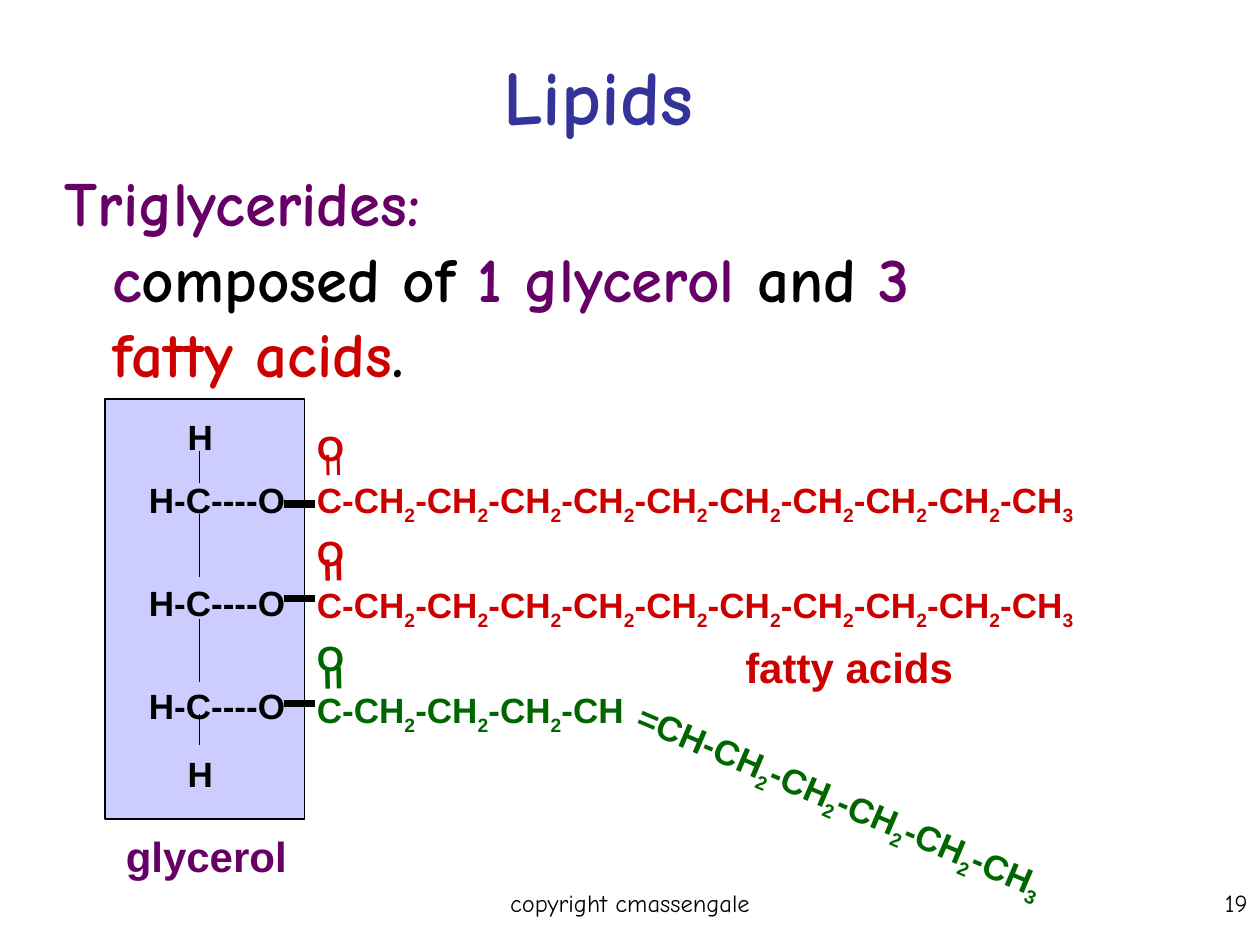
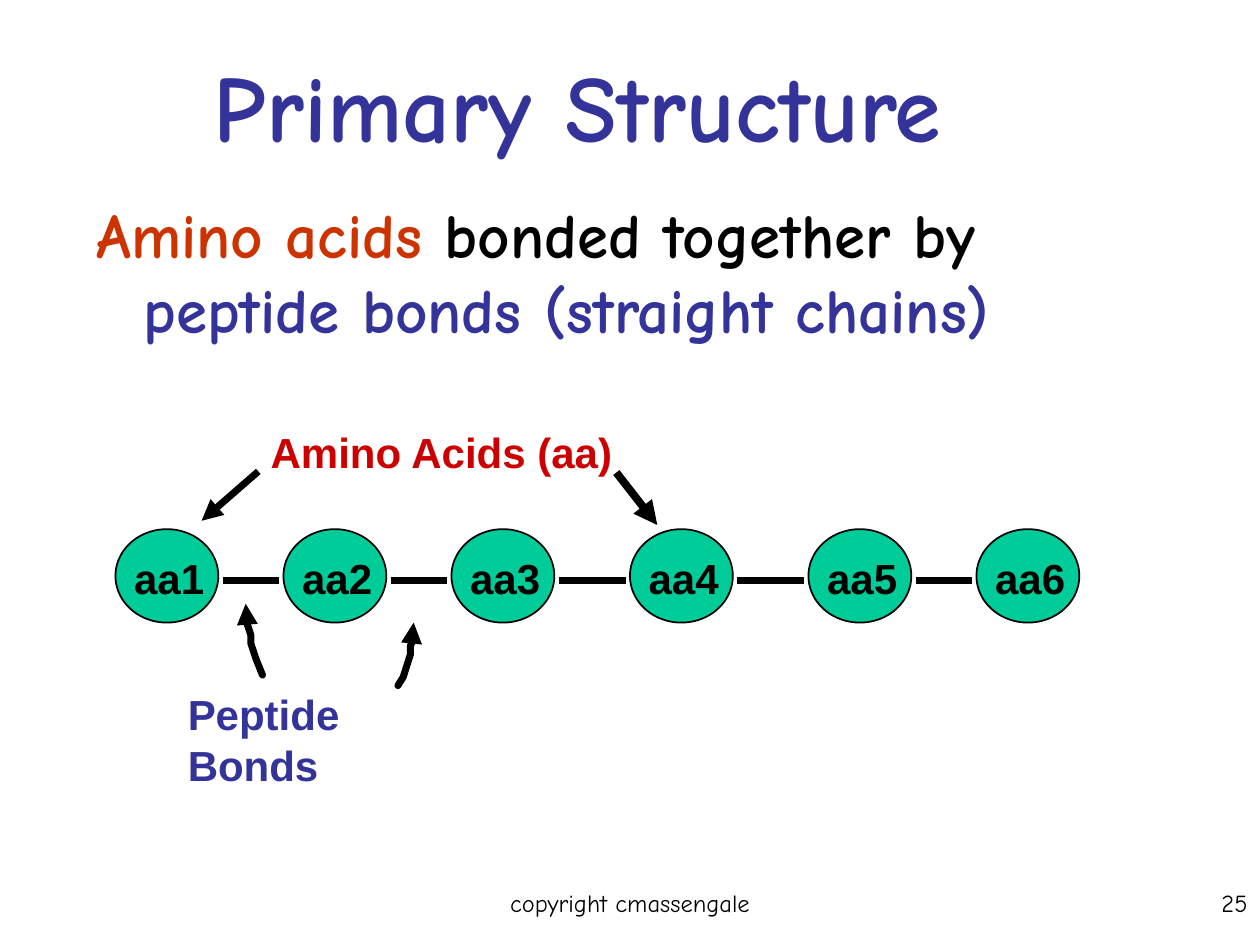
import itertools
from typing import NamedTuple

import pptx
import pptx.dml.color
import pptx.enum.shapes
import pptx.enum.text
import pptx.oxml
import pptx.oxml.ns
import pptx.util

# Page grid: 120 columns by 90 rows of square cells
COLUMNS, ROWS = 120, 90
CELL = pptx.util.Inches(10) // COLUMNS

# Shared style
HAND, SANS = "Comic Neue", "Arial"
BLACK, NAVY, PURPLE = "000000", "333399", "660066"
RED, RUST, GREEN = "CC0000", "CC3300", "006600"
LILAC, TEAL = "CCCCFF", "00CC99"
LEFT, CENTER, RIGHT = (
    pptx.enum.text.PP_ALIGN.LEFT,
    pptx.enum.text.PP_ALIGN.CENTER,
    pptx.enum.text.PP_ALIGN.RIGHT,
)
SHAPES = pptx.enum.shapes.MSO_SHAPE


class Box(NamedTuple):
    col: float
    row: float
    width: float
    height: float


class Style(NamedTuple):
    size: float
    color: str = BLACK
    font: str = SANS
    bold: bool = True


class Piece(NamedTuple):
    text: str
    color: str


class Chain(NamedTuple):
    row: float
    width: float
    formula: str
    color: str
    bond_row: float
    double_bond_row: float
    double_bond_bold: bool = True


NOTE = Style(14, font=HAND, bold=False)
BODY = Style(36, font=HAND)
ATOMS = Style(20)
LABEL = Style(24)


# Drawing helpers
def cells(count: float) -> pptx.util.Emu:
    return pptx.util.Emu(round(count * CELL))


def rgb(color: str) -> pptx.dml.color.RGBColor:
    return pptx.dml.color.RGBColor.from_string(color)


def add_run(p, text: str, style: Style, subscript: bool = False) -> None:
    r = p.add_run()
    r.text = text
    r.font.name = style.font
    r.font.size = pptx.util.Pt(style.size)
    r.font.bold = style.bold
    r.font.color.rgb = rgb(style.color)
    if subscript:
        r._r.get_or_add_rPr().set("baseline", "-25000")


def add_formula(p, formula: str, style: Style) -> None:
    for is_digit, chars in itertools.groupby(formula, str.isdigit):
        size = 19 if is_digit else style.size
        add_run(p, "".join(chars), style._replace(size=size), is_digit)


def set_indent(p, left: float, first: float = 0) -> None:
    pPr = p._p.get_or_add_pPr()
    pPr.set("marL", str(cells(left)))
    pPr.set("indent", str(cells(first)))


def add_box(s, box: Box, wrap: bool = False, rotation: float = 0):
    sp = s.shapes.add_textbox(*map(cells, box))
    sp.rotation = rotation
    sp.text_frame.word_wrap = wrap
    return sp.text_frame


def add_label(s, box: Box, text: str, style: Style, align=LEFT,
              wrap: bool = False, rotation: float = 0):
    tf = add_box(s, box, wrap, rotation)
    p = tf.paragraphs[0]
    p.alignment = align
    for i, line in enumerate(text.split("\n")):
        if i:
            p.add_line_break()
        add_run(p, line, style)
    return tf


def add_body(s, box: Box, lines: list[list[Piece]]) -> None:
    p = add_box(s, box, wrap=True).paragraphs[0]
    set_indent(p, 4.5, -4.5)
    for i, line in enumerate(lines):
        if i:
            p.add_line_break()
        for piece in line:
            add_run(p, piece.text, BODY._replace(color=piece.color))


def add_shape(s, kind, box: Box, fill: str) -> None:
    sp = s.shapes.add_shape(kind, *map(cells, box))
    sp.shadow.inherit = False
    sp.fill.solid()
    sp.fill.fore_color.rgb = rgb(fill)
    sp.line.color.rgb = rgb(BLACK)
    sp.line.width = pptx.util.Pt(1)


def style_line(sp, width: float, arrow: bool) -> None:
    sp.line.color.rgb = rgb(BLACK)
    sp.line.width = pptx.util.Pt(width)
    if arrow:
        tail = pptx.oxml.parse_xml(
            f'<a:tailEnd {pptx.oxml.ns.nsdecls("a")} type="triangle"/>')
        sp.line._get_or_add_ln().append(tail)


def add_line(s, start: tuple, end: tuple, width: float, arrow: bool = False) -> None:
    sp = s.shapes.add_connector(
        pptx.enum.shapes.MSO_CONNECTOR.STRAIGHT, *map(cells, start + end))
    style_line(sp, width, arrow)
    sp._element.spPr.append(
        pptx.oxml.parse_xml(f'<a:effectLst {pptx.oxml.ns.nsdecls("a")}/>'))


def add_curved_arrow(s, points: list[tuple]) -> None:
    start, *rest = [tuple(map(cells, point)) for point in points]
    builder = s.shapes.build_freeform(*start)
    builder.add_line_segments(rest, close=False)
    sp = builder.convert_to_shape()
    sp.shadow.inherit = False
    sp.fill.background()
    style_line(sp, 4, arrow=True)
    sp.line._get_or_add_ln().set("cap", "rnd")


def new_slide(prs, title: str, title_box: Box, title_size: float, number: int):
    s = prs.slides.add_slide(prs.slide_layouts[6])
    add_label(s, Box(95, 84, 25, 6), str(number), NOTE, RIGHT, wrap=True)
    tf = add_label(s, title_box, title, Style(title_size, NAVY, HAND), CENTER, wrap=True)
    tf.vertical_anchor = pptx.enum.text.MSO_ANCHOR.MIDDLE
    add_label(s, Box(41, 84, 38, 6), "copyright cmassengale", NOTE, CENTER, wrap=True)
    return s


# Lipids slide
def add_glycerol(s) -> None:
    add_shape(s, SHAPES.RECTANGLE, Box(10, 38, 19, 40), LILAC)
    tf = add_box(s, Box(13, 39, 15.4, 36.6))
    rows = [("H", 0), ("H-C----O", 12), ("H-C----O", 34.7), ("H-C----O", 34.7), ("H", 15.3)]
    for i, (text, gap) in enumerate(rows):
        p = tf.add_paragraph() if i else tf.paragraphs[0]
        if gap:
            p.space_before = pptx.util.Pt(gap)
        if text == "H":
            set_indent(p, 3.7)
        add_run(p, text, ATOMS)
    for top, bottom in [(43, 46), (49, 55), (59, 65), (68, 71)]:
        add_line(s, (19, top), (19, bottom), 1)
    add_label(s, Box(10.8, 78.5, 17.8, 6), "glycerol", LABEL._replace(color=PURPLE))


def add_chain(s, chain: Chain) -> None:
    style = ATOMS._replace(color=chain.color)
    tf = add_label(s, Box(29, chain.row, chain.width, 10.2), "O", style)
    p = tf.add_paragraph()
    p.space_before = pptx.util.Pt(6)
    add_formula(p, chain.formula, style)
    add_label(s, Box(29.6, chain.double_bond_row, 4.8, 6), "=",
              Style(24, chain.color, bold=chain.double_bond_bold), rotation=88.7)
    add_line(s, (27, chain.bond_row), (30, chain.bond_row), 4.5)


def lipids_slide(prs) -> None:
    s = new_slide(prs, "Lipids", Box(10, 5, 94, 8), 44, 19)
    add_body(s, Box(5, 15, 105, 54), [
        [Piece("Triglycerides:", PURPLE)],
        [Piece("c", PURPLE), Piece("omposed of ", BLACK), Piece("1 glycerol", PURPLE),
         Piece(" and ", BLACK), Piece("3", PURPLE)],
        [Piece("fatty acids", RED), Piece(".", BLACK)],
    ])
    add_glycerol(s)
    saturated = "C" + "-CH2" * 9 + "-CH3"
    for chain in (
        Chain(50, 76.3, saturated, RED, 57, 51.4),
        Chain(40, 76.3, saturated, RED, 48, 41.4, double_bond_bold=False),
        Chain(60, 32.2, "C" + "-CH2" * 3 + "-CH", GREEN, 67, 61.7),
    ):
        add_chain(s, chain)
    add_label(s, Box(69.8, 60.5, 22.2, 6), "fatty acids", LABEL._replace(color=RED))
    kinked = add_box(s, Box(58, 74, 46, 5.2), wrap=True, rotation=23.1)
    add_formula(kinked.paragraphs[0], "=CH" + "-CH2" * 4 + "-CH3",
                ATOMS._replace(color=GREEN))


# Primary structure slide
def primary_structure_slide(prs) -> None:
    s = new_slide(prs, "Primary Structure", Box(8, 6, 94, 8), 54, 25)
    add_body(s, Box(8, 18, 94, 24), [[
        Piece("Amino acids ", RUST), Piece("bonded together by ", BLACK),
        Piece("peptide bonds (straight chains)", NAVY),
    ]])

    # Amino acid chain
    acid_cols, acid_width, bond_gap = [11, 27, 43, 60, 77, 93], 9.8, 0.4
    for i, col in enumerate(acid_cols, start=1):
        add_shape(s, SHAPES.OVAL, Box(col, 50.4, acid_width, 8.9), TEAL)
        add_label(s, Box(col + 0.6, 52, 9.1, 6), f"aa{i}", LABEL)
    for col, next_col in itertools.pairwise(acid_cols):
        add_line(s, (col + acid_width + bond_gap, 55.3), (next_col - bond_gap, 55.3), 4)

    # Callouts
    add_label(s, Box(16.7, 65, 30.4, 6), "Peptide\nBonds",
              LABEL._replace(color=NAVY), wrap=True)
    add_curved_arrow(s, [(25, 64.3), (24.4, 62.8), (23.9, 61.3), (23.9, 60.5),
                         (23.4, 59), (23.4, 57.5)])
    add_curved_arrow(s, [(37.9, 65.3), (38.4, 64.5), (39.1, 62.3), (39.1, 61.5),
                         (39.4, 60.8), (39.4, 59.3)])
    add_label(s, Box(24.6, 40, 35, 6), "Amino Acids (aa)", LABEL._replace(color=RED))
    add_line(s, (24.6, 44.9), (19.2, 49.6), 4, arrow=True)
    add_line(s, (58.7, 45), (62.6, 50), 4.5, arrow=True)


def main() -> None:
    prs = pptx.Presentation()
    prs.slide_width = cells(COLUMNS)
    prs.slide_height = cells(ROWS)
    lipids_slide(prs)
    primary_structure_slide(prs)
    prs.save("out.pptx")


if __name__ == "__main__":
    main()
